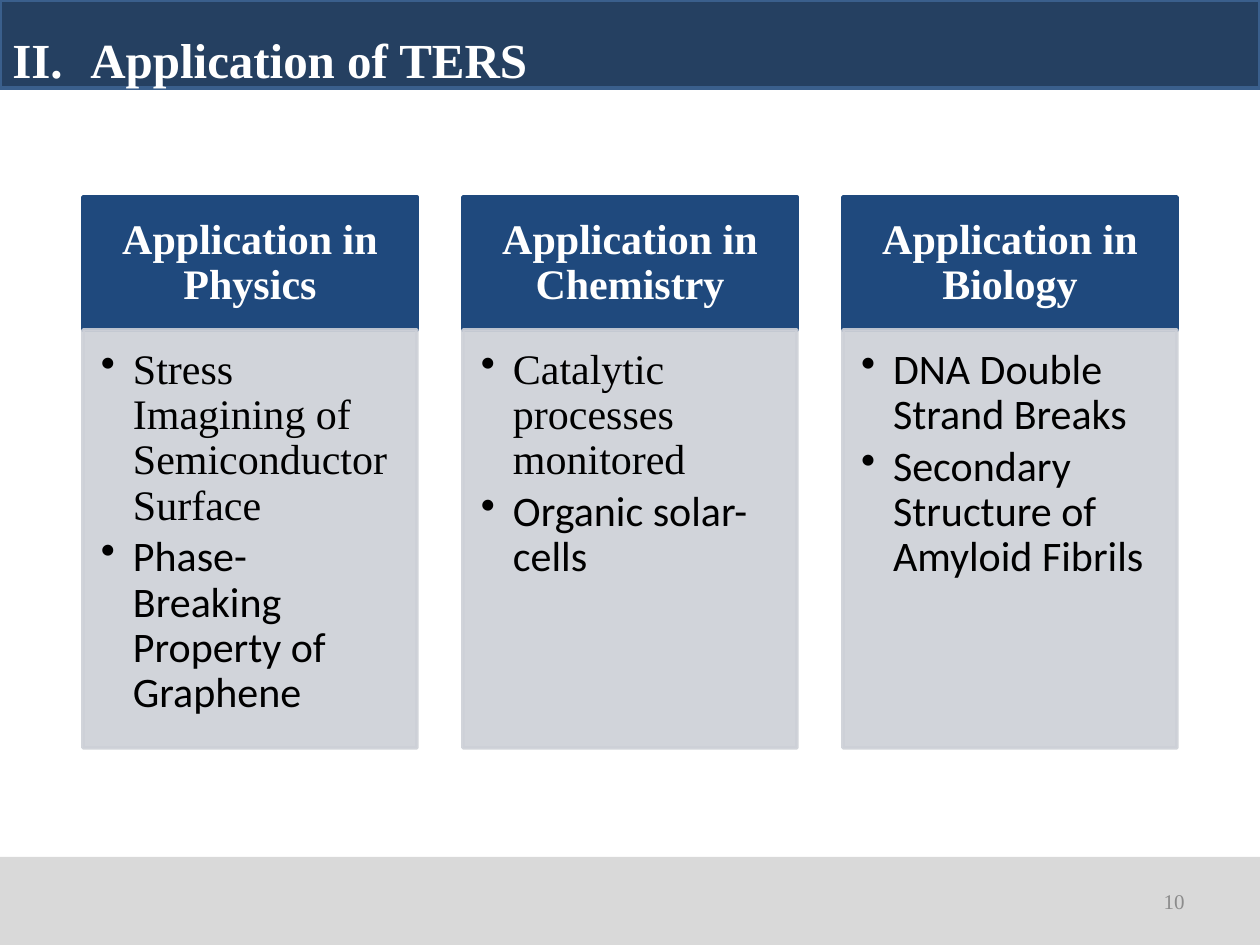
from typing import NamedTuple

from lxml.etree import SubElement
from pptx import Presentation
from pptx.dml.color import RGBColor
from pptx.enum.shapes import MSO_SHAPE as Form
from pptx.enum.text import MSO_ANCHOR as Anchor, PP_ALIGN as Align
from pptx.oxml.ns import qn
from pptx.util import Pt

SCALE = 914400 / 126
SERIF = "Times New Roman"
SANS = "Calibri"
COLORS = {
    "bar": "254061",
    "edge": "3A5F8C",
    "foot": "D9D9D9",
    "head": "1F497D",
    "body": "CDD0D7",
    "white": "FFFFFF",
    "black": "000000",
    "gray": "8C8C8C",
}
LEFT, STEP, WIDTH = 83, 380, 334
TOP, HEAD, BODY = 197, 133, 418


class Box(NamedTuple):
    left: int
    top: int
    width: int
    height: int


class Style(NamedTuple):
    size: int
    color: str
    bold: bool = False


class Item(NamedTuple):
    text: str
    font: str


class Card(NamedTuple):
    title: str
    items: list[Item]


TITLE = Style(28, "white", True)
LABEL = Style(24, "white", True)
POINT = Style(24, "black")
NUMBER = Style(12, "gray")

CARDS = [
    Card("Application in Physics", [
        Item("Stress Imagining of Semiconductor Surface", SERIF),
        Item("Phase-Breaking Property of Graphene", SANS),
    ]),
    Card("Application in Chemistry", [
        Item("Catalytic processes monitored", SERIF),
        Item("Organic solar-cells", SANS),
    ]),
    Card("Application in Biology", [
        Item("DNA Double Strand Breaks", SANS),
        Item("Secondary Structure of Amyloid Fibrils", SANS),
    ]),
]


def px(size: int) -> int:
    return round(size * SCALE)


def tint(name: str) -> RGBColor:
    return RGBColor.from_string(COLORS[name])


def draw_rect(slide, box: Box, fill: str, line: str = "", alpha: int = 100):
    shape = slide.shapes.add_shape(Form.RECTANGLE, *map(px, box))
    shape.shadow.inherit = False
    shape.fill.solid()
    shape.fill.fore_color.rgb = tint(fill)
    if line:
        shape.line.color.rgb = tint(line)
        shape.line.width = Pt(2)
    else:
        shape.line.fill.background()
    if alpha < 100:
        for color in shape._element.spPr.iter(qn("a:srgbClr")):
            SubElement(color, qn("a:alpha"), val=str(alpha * 1000))
    return shape


def set_frame(frame, anchor: Anchor, insets: tuple[int, ...] = ()) -> None:
    frame.word_wrap = True
    frame.vertical_anchor = anchor
    sides = ("margin_left", "margin_top", "margin_right", "margin_bottom")
    for side, inset in zip(sides, insets):
        setattr(frame, side, px(inset))


def add_run(para, item: Item, style: Style) -> None:
    run = para.add_run()
    run.text = item.text
    run.font.name = item.font
    run.font.size = Pt(style.size)
    run.font.bold = style.bold
    run.font.color.rgb = tint(style.color)


def set_mark(para, indent: int, tag: str, **attrs: str) -> None:
    props = para._p.get_or_add_pPr()
    props.set("marL", str(px(indent)))
    props.set("indent", str(-px(indent)))
    SubElement(props, qn(tag), **attrs)


def draw_title(slide) -> None:
    bar = draw_rect(slide, Box(0, 0, 1260, 88), "bar", "edge")
    set_frame(bar.text_frame, Anchor.MIDDLE)
    para = bar.text_frame.paragraphs[0]
    set_mark(para, 78, "a:buAutoNum", type="romanUcPeriod", startAt="2")
    para.alignment = Align.LEFT
    para.line_spacing = 1.5
    add_run(para, Item("Application of TERS", SERIF), TITLE)


def draw_foot(slide) -> None:
    draw_rect(slide, Box(0, 857, 1260, 88), "foot")
    note = slide.shapes.add_textbox(*map(px, Box(903, 876, 294, 50)))
    set_frame(note.text_frame, Anchor.MIDDLE)
    para = note.text_frame.paragraphs[0]
    para.alignment = Align.RIGHT
    add_run(para, Item("10", SERIF), NUMBER)


def draw_card(slide, left: int, card: Card) -> None:
    head = draw_rect(slide, Box(left, TOP, WIDTH, HEAD), "head", "head")
    set_frame(head.text_frame, Anchor.MIDDLE, (24, 14, 24, 14))
    para = head.text_frame.paragraphs[0]
    para.alignment = Align.CENTER
    para.line_spacing = 0.9
    add_run(para, Item(card.title, SERIF), LABEL)

    body = draw_rect(slide, Box(left, TOP + HEAD, WIDTH, BODY), "body", "body", 90)
    frame = body.text_frame
    set_frame(frame, Anchor.TOP, (18, 18, 24, 26))
    for index, item in enumerate(card.items):
        para = frame.add_paragraph() if index else frame.paragraphs[0]
        set_mark(para, 32, "a:buChar", char="•")
        para.level = 1
        para.alignment = Align.LEFT
        para.line_spacing = 0.9
        para.space_after = Pt(3.6)
        add_run(para, item, POINT)


def main() -> None:
    deck = Presentation()
    deck.slide_width, deck.slide_height = px(1260), px(945)
    slide = deck.slides.add_slide(deck.slide_layouts[6])
    draw_title(slide)
    draw_foot(slide)
    for index, card in enumerate(CARDS):
        draw_card(slide, LEFT + index * STEP, card)
    deck.save("out.pptx")


if __name__ == "__main__":
    main()
